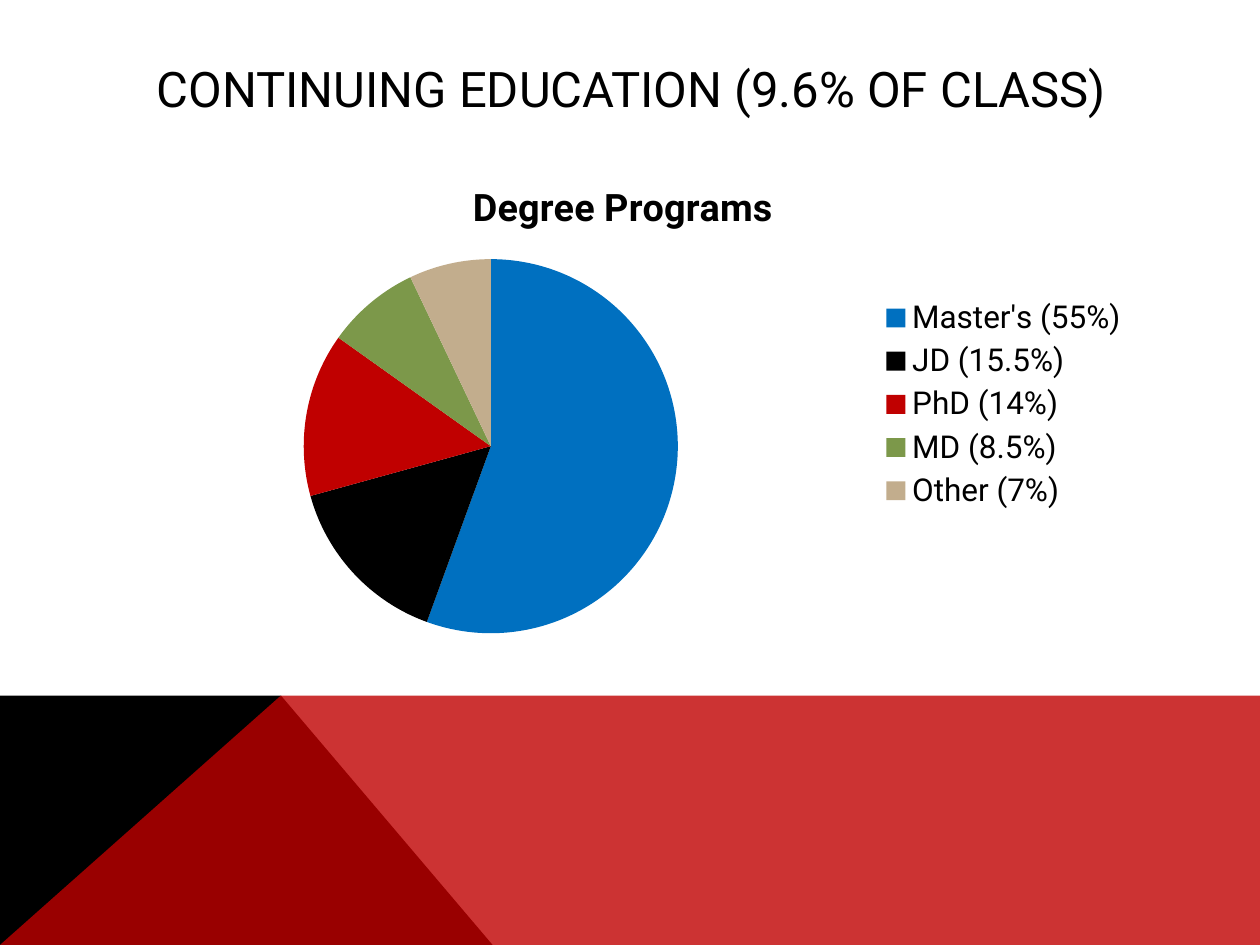
from typing import NamedTuple

from lxml.etree import SubElement
from pptx import Presentation
from pptx.chart.data import CategoryChartData as ChartData
from pptx.dml.color import RGBColor as RGB
from pptx.enum.chart import XL_CHART_TYPE as Kind, XL_LEGEND_POSITION as Side
from pptx.enum.text import MSO_ANCHOR as Anchor, MSO_AUTO_SIZE as Fit, PP_ALIGN as Align
from pptx.oxml import parse_xml
from pptx.oxml.ns import nsdecls, qn
from pptx.util import Inches, Pt

WIDE, HIGH = 10, 7.5
FONT = "Roboto"
BLACK, RED = "000000", "C00000"


class Box(NamedTuple):
    """A place in shares of its parent's width and height."""
    x: float
    y: float
    w: float
    h: float


class Degree(NamedTuple):
    name: str
    share: int
    color: str


class Band(NamedTuple):
    points: list[tuple[float, float]]
    color: str
    alpha: int = 100


EDGE, PEAK = 0.736, 0.223
BANDS = [
    Band([(0, 1), (0, EDGE), (PEAK, EDGE), (0.391, 1)], BLACK),
    Band([(0, 1), (PEAK, EDGE), (1, EDGE), (1, 1)], RED, 80),
]
DEGREES = [
    Degree("Master's (55%)", 55, "0070C0"),
    Degree("JD (15.5%)", 15, BLACK),
    Degree("PhD (14%)", 14, RED),
    Degree("MD (8.5%)", 8, "7C984A"),
    Degree("Other (7%)", 7, "C2AD8D"),
]
TITLE = Box(0.09, 0.053, 0.822, 0.08)
CHART = Box(0.083, 0.167, 0.823, 0.521)
PIE = Box(0.192, 0.206, 0.361, 0.76)
LEGEND = Box(0.742, 0.275, 0.25, 0.452)


def paint(target, color: str) -> None:
    """Give a fill or a font a solid colour."""
    if hasattr(target, "solid"):
        target.solid()
        target = target.fore_color
    else:
        target = target.color
    target.rgb = RGB.from_string(color)


def style(font, size: float, bold: bool = False) -> None:
    font.name, font.size, font.bold = FONT, Pt(size), bold
    paint(font, BLACK)


def frame(box: Box) -> list[int]:
    return [Inches(n) for n in (box.x * WIDE, box.y * HIGH, box.w * WIDE, box.h * HIGH)]


def draw_band(slide, band: Band) -> None:
    dots = [(Inches(x * WIDE), Inches(y * HIGH)) for x, y in band.points]
    pen = slide.shapes.build_freeform(*dots[0])
    pen.add_line_segments(dots[1:], close=True)
    shape = pen.convert_to_shape()
    shape.shadow.inherit = False
    paint(shape.fill, band.color)
    shape.line.fill.background()
    if band.alpha < 100:
        tint = shape.fill._xPr.find(".//" + qn("a:srgbClr"))
        SubElement(tint, qn("a:alpha")).set("val", str(band.alpha * 1000))


def draw_title(slide, text: str) -> None:
    title = slide.shapes.title
    title.left, title.top, title.width, title.height = frame(TITLE)
    body = title.text_frame
    body.auto_size, body.vertical_anchor = Fit.NONE, Anchor.MIDDLE
    para = body.paragraphs[0]
    para.alignment = Align.CENTER
    run = para.add_run()
    run.text = text
    style(run.font, 28)


def layout(box: Box, inner: bool = False):
    """Make a manual chart layout."""
    target = '<c:layoutTarget val="inner"/>' if inner else ""
    modes = "".join(f'<c:{n}Mode val="edge"/>' for n in "xy")
    sizes = "".join(f'<c:{n} val="{v}"/>' for n, v in box._asdict().items())
    return parse_xml(
        f'<c:layout {nsdecls("c")}><c:manualLayout>{target}{modes}{sizes}'
        "</c:manualLayout></c:layout>"
    )


def draw_chart(slide, name: str, degrees: list[Degree]) -> None:
    data = ChartData()
    data.categories = [d.name for d in degrees]
    data.add_series(name, [d.share for d in degrees])
    chart = slide.shapes.add_chart(Kind.PIE, *frame(CHART), data).chart
    style(chart.font, 18)

    chart.has_title = True
    run = chart.chart_title.text_frame.paragraphs[0].add_run()
    run.text = name
    style(run.font, 21.6, True)

    chart.has_legend = True
    legend = chart.legend
    legend.position, legend.include_in_layout = Side.RIGHT, False
    style(legend.font, 18)

    plot = chart.plots[0]
    plot.vary_by_categories = True
    for i, degree in enumerate(degrees):
        part = plot.series[0].points[i].format
        paint(part.fill, degree.color)
        part.line.fill.background()

    area = chart._chartSpace.chart.plotArea
    for old in area.findall(qn("c:layout")):
        area.remove(old)
    area.insert(0, layout(PIE, True))
    key = legend._element
    for old in key.findall(qn("c:layout")):
        key.remove(old)
    key.find(qn("c:legendPos")).addnext(layout(LEGEND))


def main() -> None:
    deck = Presentation()
    deck.slide_width, deck.slide_height = Inches(WIDE), Inches(HIGH)
    slide = deck.slides.add_slide(deck.slide_layouts[5])
    paint(slide.background.fill, "FFFFFF")
    for band in BANDS:
        draw_band(slide, band)
    draw_title(slide, "CONTINUING EDUCATION (9.6% OF CLASS)")
    draw_chart(slide, "Degree Programs", DEGREES)
    deck.save("out.pptx")


if __name__ == "__main__":
    main()
